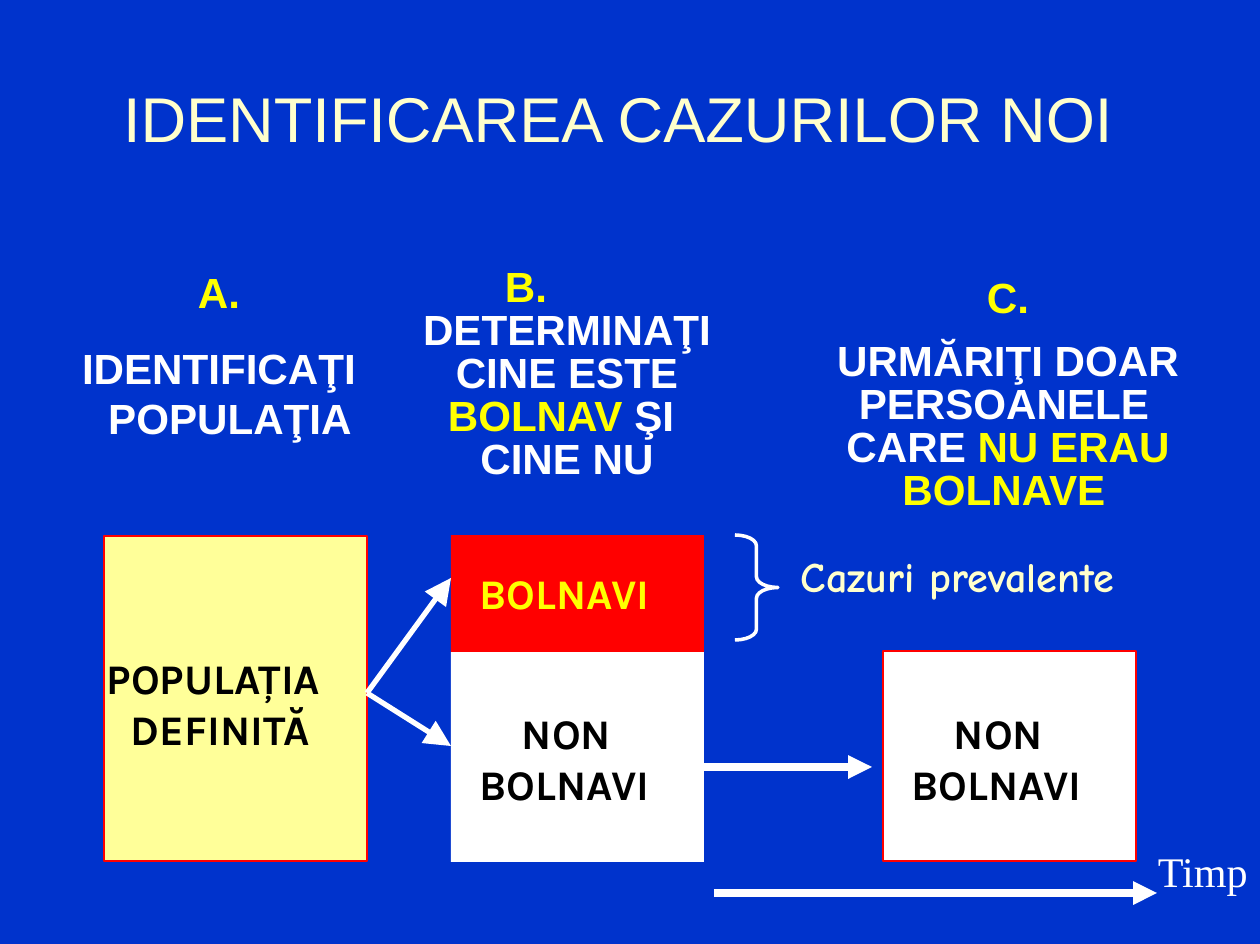
import pptx
import pptx.dml.color
import pptx.enum.shapes
import pptx.enum.text
import pptx.oxml.ns
import pptx.util
from lxml import etree

PX = 7234  # EMU per px
WHITE, YELLOW, CREAM, BLACK, RED = "FFFFFF", "FFFF00", "FFFFCC", "000000", "FF0000"
SHAPE = pptx.enum.shapes.MSO_SHAPE
ALIGN = pptx.enum.text.PP_ALIGN


def emu(*lengths):
    return [pptx.util.Emu(n * PX) for n in lengths]


def rgb(value):
    return pptx.dml.color.RGBColor.from_string(value)


def write(tf, lines, font="Arial", size=24, color=WHITE, bold=True,
          align=ALIGN.CENTER, spacing=None, gap=0, top=0):
    """Fill a frame; a line is (shift in px, run, ...), a run is text or (text, color)."""
    tf.word_wrap = True
    tf.auto_size = pptx.enum.text.MSO_AUTO_SIZE.NONE
    tf.vertical_anchor = pptx.enum.text.MSO_ANCHOR.TOP
    tf.margin_left = tf.margin_right = tf.margin_bottom = 0
    tf.margin_top = emu(top)[0]
    for i, (shift, *runs) in enumerate(lines):
        p = tf.paragraphs[0] if i == 0 else tf.add_paragraph()
        p.alignment = align
        p.space_before = pptx.util.Pt(gap if i == 1 else 0)
        if spacing:
            p.line_spacing = pptx.util.Pt(spacing)
        pPr = p._p.get_or_add_pPr()
        pPr.set("marL", str(2 * max(shift, 0) * PX))
        pPr.set("marR", str(2 * max(-shift, 0) * PX))
        pPr.set("indent", "0")
        for run in runs:
            text, run_color = (run, color) if isinstance(run, str) else run
            r = p.add_run()
            r.text = text
            r.font.name = font
            r.font.size = pptx.util.Pt(size)
            r.font.bold = bold
            r.font.color.rgb = rgb(run_color)
            r._r.get_or_add_rPr().set("lang", "ro-RO")


def add_text(s, box, lines, **fmt):
    write(s.shapes.add_textbox(*emu(*box)).text_frame, lines, **fmt)


def add_box(s, box, fill, lines, line=None, **fmt):
    sp = s.shapes.add_shape(SHAPE.RECTANGLE, *emu(*box))
    sp.shadow.inherit = False
    sp.fill.solid()
    sp.fill.fore_color.rgb = rgb(fill)
    if line:
        sp.line.color.rgb = rgb(line)
        sp.line.width = pptx.util.Pt(0.72)
    else:
        sp.line.fill.background()
    write(sp.text_frame, lines, font="Karla", spacing=29, **fmt)


def add_arrow(s, start, end, width, head):
    cxn = s.shapes.add_connector(
        pptx.enum.shapes.MSO_CONNECTOR.STRAIGHT, *emu(*start, *end))
    cxn.line.color.rgb = rgb(WHITE)
    cxn.line.width = pptx.util.Pt(width)
    qn = pptx.oxml.ns.qn
    etree.SubElement(cxn.line._get_or_add_ln(), qn("a:tailEnd"),
                     type="triangle", w=head, len=head)
    etree.SubElement(cxn._element.spPr, qn("a:effectLst"))


def add_brace(s, box):
    sp = s.shapes.add_shape(SHAPE.RIGHT_BRACE, *emu(*box))
    sp.shadow.inherit = False
    sp.fill.background()
    sp.line.color.rgb = rgb(WHITE)
    sp.line.width = pptx.util.Pt(2)
    sp.adjustments[0] = 0.25


def add_title(s, box, text):
    title = s.shapes.title
    title.left, title.top, title.width, title.height = emu(*box)
    write(title.text_frame, [(0, text)], size=36, color=CREAM, bold=False,
          align=ALIGN.LEFT)


def add_steps(s):
    add_text(s, (69, 267, 300, 178), [
        (0, ("A.", YELLOW)),
        (0, "IDENTIFICAŢI"),
        (11, "POPULAŢIA"),
    ], spacing=28.5, gap=15)
    add_text(s, (367, 268, 400, 216), [
        (-41, ("B.", YELLOW)),
        (0, "DETERMINAŢI"),
        (0, "CINE ESTE"),
        (-6, ("BOLNAV ", YELLOW), "ŞI"),
        (0, "CINE NU"),
    ], spacing=24.5)
    add_text(s, (808, 279, 400, 236), [
        (0, ("C.", YELLOW)),
        (0, "URMĂRIŢI DOAR"),
        (-4, "PERSOANELE"),
        (0, "CARE ", ("NU ERAU", YELLOW)),
        (-4, ("BOLNAVE", YELLOW)),
    ], spacing=24.5, gap=11.4)


def add_groups(s):
    healthy = [(-11, "NON"), (-13, "BOLNAVI")]
    add_box(s, (104, 536, 263, 325), "FFFF99",
            [(-22, "POPULAŢIA"), (-15, "DEFINITĂ")], line=RED, color=BLACK, top=116)
    add_box(s, (451, 652, 253, 210), WHITE, healthy, color=BLACK, top=55)
    add_box(s, (451, 535, 253, 117), RED, [(-13, "BOLNAVI")], color=YELLOW, top=32)
    add_box(s, (883, 651, 253, 210), WHITE, healthy, line=RED, color=BLACK, top=56)


def main():
    prs = pptx.Presentation()
    prs.slide_width, prs.slide_height = emu(1260, 944)
    s = prs.slides.add_slide(prs.slide_layouts[5])
    s.background.fill.solid()
    s.background.fill.fore_color.rgb = rgb("0033CC")

    add_title(s, (123, 79, 1020, 80), "IDENTIFICAREA CAZURILOR NOI")
    add_steps(s)
    add_groups(s)
    add_brace(s, (735, 535, 43, 105))
    add_text(s, (801, 550, 359, 54), [(0, "Cazuri prevalente")],
             font="Comic Neue", color=CREAM, align=ALIGN.LEFT)
    add_arrow(s, (367, 693), (451, 578), 3, "lg")
    add_arrow(s, (367, 693), (451, 746), 3, "lg")
    add_arrow(s, (704, 767), (872, 767), 4.5, "med")
    add_arrow(s, (714, 893), (1157, 893), 4.5, "med")
    add_text(s, (1158, 845, 95, 54), [(0, "Timp")],
             font="Times New Roman", bold=False, align=ALIGN.LEFT)
    prs.save("out.pptx")


if __name__ == "__main__":
    main()
